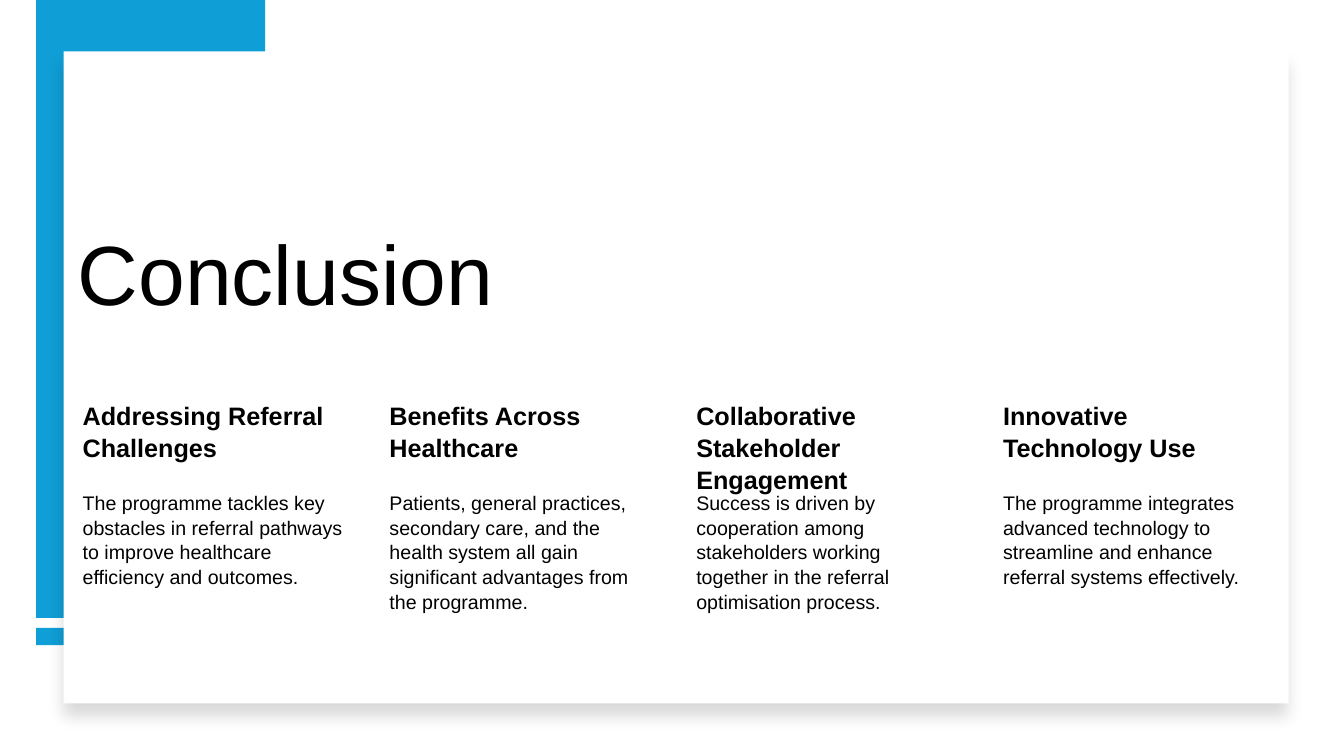
from lxml import etree
from pptx import Presentation
from pptx.dml.color import RGBColor
from pptx.enum.shapes import MSO_SHAPE
from pptx.enum.text import MSO_ANCHOR, MSO_AUTO_SIZE, PP_ALIGN
from pptx.oxml import parse_xml
from pptx.oxml.ns import nsdecls
from pptx.util import Inches, Pt

RECT = MSO_SHAPE.RECTANGLE
TOP, BOTTOM = MSO_ANCHOR.TOP, MSO_ANCHOR.BOTTOM
LEFT = PP_ALIGN.LEFT
NO_FIT = MSO_AUTO_SIZE.NONE

# Content
TITLE = "Conclusion"
POINTS = [
    ("Addressing Referral Challenges",
     "The programme tackles key obstacles in referral pathways to improve "
     "healthcare efficiency and outcomes."),
    ("Benefits Across Healthcare",
     "Patients, general practices, secondary care, and the health system all "
     "gain significant advantages from the programme."),
    ("Collaborative Stakeholder Engagement",
     "Success is driven by cooperation among stakeholders working together in "
     "the referral optimisation process."),
    ("Innovative Technology Use",
     "The programme integrates advanced technology to streamline and enhance "
     "referral systems effectively."),
]
FONT = "Arial"
COLORS = {"accent": "0F9ED5", "panel": "FFFFFF", "text": "000000", "shade": "000000"}

# Layout in inches
BAR_X, BAR_W = 0.36, 2.27
BARS = [(6.23, 0.17), (0, 6.13)]
PANEL = (0.63, 0.51, 12.15, 6.47)
COL_X, COL_W, STEP = 0.67, 2.77, 3.043
HEAD_Y, HEAD_H, BODY_H = 3.93, 0.91, 1.83

prs = Presentation()
prs.slide_width, prs.slide_height = Inches(13.33), Inches(7.5)
slide = prs.slides.add_slide(prs.slide_layouts[5])
shapes = slide.shapes


def add_rect(x, y, w, h, color):
    rect = shapes.add_shape(RECT, Inches(x), Inches(y), Inches(w), Inches(h))
    rect.shadow.inherit = False
    rect.fill.solid()
    rect.fill.fore_color.rgb = RGBColor.from_string(COLORS[color])
    rect.line.fill.background()
    return rect


def add_shade(shape, blur, drop, alpha):
    """Cast a soft shadow straight down; blur and drop in points."""
    shape._element.spPr.find("{*}effectLst").append(parse_xml(
        f'<a:outerShdw {nsdecls("a")} blurRad="{Pt(blur)}" dist="{Pt(drop)}" '
        f'dir="5400000" algn="t" rotWithShape="0">'
        f'<a:srgbClr val="{COLORS["shade"]}"><a:alpha val="{alpha * 1000}"/>'
        f'</a:srgbClr></a:outerShdw>'))


def put_text(box, text, size, bold=False, anchor=TOP, spacing=1.05,
             inset=(0.1, 0.05, 0.1, 0.05)):
    frame = box.text_frame
    frame.word_wrap = True
    frame.auto_size = NO_FIT
    frame.vertical_anchor = anchor
    (frame.margin_left, frame.margin_top,
     frame.margin_right, frame.margin_bottom) = map(Inches, inset)
    frame.text = text
    para = frame.paragraphs[0]
    para.alignment = LEFT
    para.line_spacing = spacing
    font = para.runs[0].font
    font.name, font.size, font.bold = FONT, Pt(size), bold
    font.color.rgb = RGBColor.from_string(COLORS["text"])


# Accent bars and the panel over them
for y, h in BARS:
    add_rect(BAR_X, y, BAR_W, h, "accent")
add_shade(add_rect(*PANEL, "panel"), blur=11, drop=10, alpha=15)

# Title, brought in front of the panel
title = shapes.title
shapes._spTree.append(title._element)
title.left, title.top = Inches(COL_X), Inches(2.02)
title.width, title.height = Inches(8.03), Inches(1.24)
put_text(title, TITLE, 60, anchor=BOTTOM, spacing=0.9)

# Four columns, each a heading above its text
for i, point in enumerate(POINTS):
    x = COL_X + i * STEP
    rows = [(HEAD_Y, HEAD_H, 18, True, 0.03),
            (HEAD_Y + HEAD_H, BODY_H, 14, False, 0.02)]
    for text, (y, h, size, bold, pad) in zip(point, rows):
        box = shapes.add_textbox(Inches(x), Inches(y), Inches(COL_W), Inches(h))
        put_text(box, text, size, bold=bold, inset=(0.15, pad, pad, pad))

prs.save("out.pptx")
